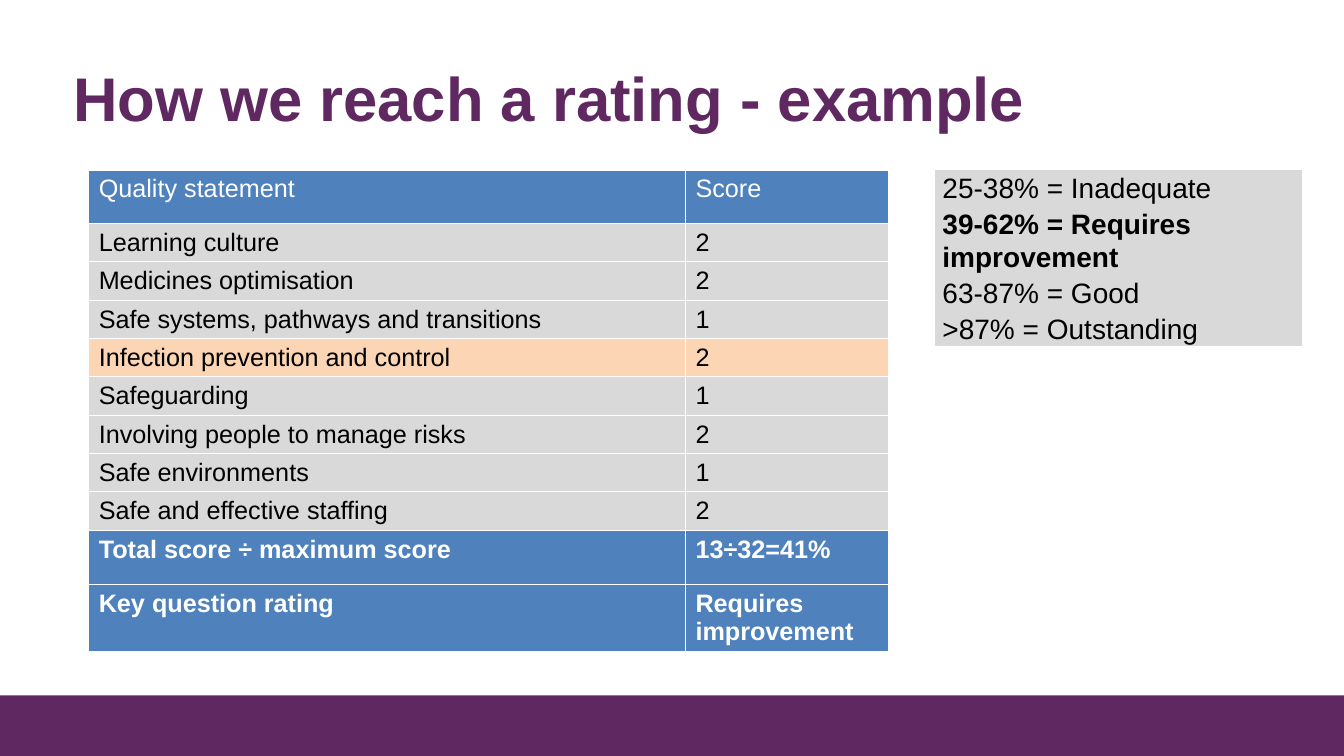
from dataclasses import dataclass

from lxml.etree import SubElement
from pptx import Presentation
from pptx.dml.color import RGBColor
from pptx.enum.shapes import MSO_SHAPE
from pptx.enum.text import MSO_ANCHOR as Anchor, MSO_AUTO_SIZE as AutoSize, PP_ALIGN as Align
from pptx.oxml.ns import qn
from pptx.util import Inches, Pt


@dataclass(frozen=True)
class Theme:
    font: str = "Arial"
    plum: str = "5F2861"
    blue: str = "4F81BD"
    grey: str = "D9D9D9"
    peach: str = "FCD5B5"
    white: str = "FFFFFF"
    black: str = "000000"
    title_size: int = 44
    score_size: int = 18
    band_size: int = 20


THEME = Theme()


def write_text(frame, text, *, size, color, bold=False, spacing=None,
               anchor=Anchor.TOP):
    frame.word_wrap = True
    frame.vertical_anchor = anchor
    paragraph = frame.paragraphs[0]
    paragraph.alignment = Align.LEFT
    paragraph.line_spacing = spacing
    run = paragraph.add_run()
    run.text = text
    run.font.name = THEME.font
    run.font.size = Pt(size)
    run.font.bold = bold
    run.font.color.rgb = RGBColor.from_string(color)


def set_borders(cell, color):
    """Draw 1 pt borders on all four sides, or none when color is None."""
    properties = cell._tc.get_or_add_tcPr()
    for index, side in enumerate(("lnL", "lnR", "lnT", "lnB")):
        line = SubElement(properties, qn(f"a:{side}"), w=str(Pt(1)))
        properties.remove(line)
        properties.insert(index, line)
        if color:
            SubElement(SubElement(line, qn("a:solidFill")), qn("a:srgbClr"), val=color)
        else:
            SubElement(line, qn("a:noFill"))


class SlideBuilder:
    """Places elements on a grid of 100 columns by 100 rows."""

    def __init__(self, deck, theme):
        self.theme = theme
        self.column = deck.slide_width / 100
        self.row = deck.slide_height / 100
        self.slide = deck.slides.add_slide(deck.slide_layouts[5])

    def place(self, left, top, width, height):
        return (round(left * self.column), round(top * self.row),
                round(width * self.column), round(height * self.row))

    def title(self, text, *area):
        title = self.slide.shapes.title
        title.left, title.top, title.width, title.height = self.place(*area)
        frame = title.text_frame
        frame.auto_size = AutoSize.NONE
        frame.margin_left, frame.margin_top = Inches(0.06), Inches(0.11)
        write_text(frame, text, size=self.theme.title_size,
                   color=self.theme.plum, bold=True)

    def band(self, color, *area):
        footer = self.slide.shapes.add_shape(MSO_SHAPE.RECTANGLE, *self.place(*area))
        footer.shadow.inherit = False
        footer.fill.solid()
        footer.fill.fore_color.rgb = RGBColor.from_string(color)
        footer.line.fill.background()

    def table(self, left, top, widths, rows, *, border=None, margins=None, **base):
        """Each row is (height, cell texts, fill, text format)."""
        area = self.place(left, top, sum(widths), sum(row[0] for row in rows))
        table = self.slide.shapes.add_table(len(rows), len(widths), *area).table
        table.first_row = table.horz_banding = False
        for column, width in zip(table.columns, widths):
            column.width = round(width * self.column)
        for line, (height, texts, fill, style) in zip(table.rows, rows):
            line.height = round(height * self.row)
            for cell, text in zip(line.cells, texts):
                cell.fill.solid()
                cell.fill.fore_color.rgb = RGBColor.from_string(fill)
                set_borders(cell, border)
                write_text(cell.text_frame, text, **{**base, **style})
                if margins:
                    side, edge = map(Inches, margins)
                    cell.margin_left = cell.margin_right = side
                    cell.margin_top = cell.margin_bottom = edge
                cell.vertical_anchor = base.get("anchor", Anchor.TOP)


STATEMENTS = [
    ("Learning culture", "2"),
    ("Medicines optimisation", "2"),
    ("Safe systems, pathways and transitions", "1"),
    ("Infection prevention and control", "2"),
    ("Safeguarding", "1"),
    ("Involving people to manage risks", "2"),
    ("Safe environments", "1"),
    ("Safe and effective staffing", "2"),
]
HIGHLIGHTED = "Infection prevention and control"


def main():
    deck = Presentation()
    deck.slide_width, deck.slide_height = Inches(13.33), Inches(7.5)
    slide = SlideBuilder(deck, THEME)

    slide.band(THEME.plum, 0, 92, 100, 8)
    slide.title("How we reach a rating - example", 5, 6.4, 90, 19.3)

    heading = {"color": THEME.white}
    summary = {"color": THEME.white, "bold": True}
    scores = [(7.07, ("Quality statement", "Score"), THEME.blue, heading)]
    scores += [(5.07, entry, THEME.peach if entry[0] == HIGHLIGHTED else THEME.grey, {})
               for entry in STATEMENTS]
    scores += [
        (7.2, ("Total score ÷ maximum score", "13÷32=41%"), THEME.blue, summary),
        (8.7, ("Key question rating", "Requires improvement"), THEME.blue, summary),
    ]
    slide.table(6.6, 22.5, (44.4, 15.1), scores, border=THEME.white,
                size=THEME.score_size, color=THEME.black)

    ratings = [
        (4.6, ("25-38% = Inadequate",), THEME.grey, {}),
        (9.2, ("39-62% = Requires improvement",), THEME.grey, {"bold": True}),
        (4.6, ("63-87% = Good",), THEME.grey, {}),
        (4.6, (">87% = Outstanding",), THEME.grey, {}),
    ]
    slide.table(69.6, 22.5, (27.25,), ratings, margins=(0.07, 0.01),
                size=THEME.band_size, color=THEME.black, spacing=1.07,
                anchor=Anchor.MIDDLE)

    deck.save("out.pptx")


if __name__ == "__main__":
    main()
